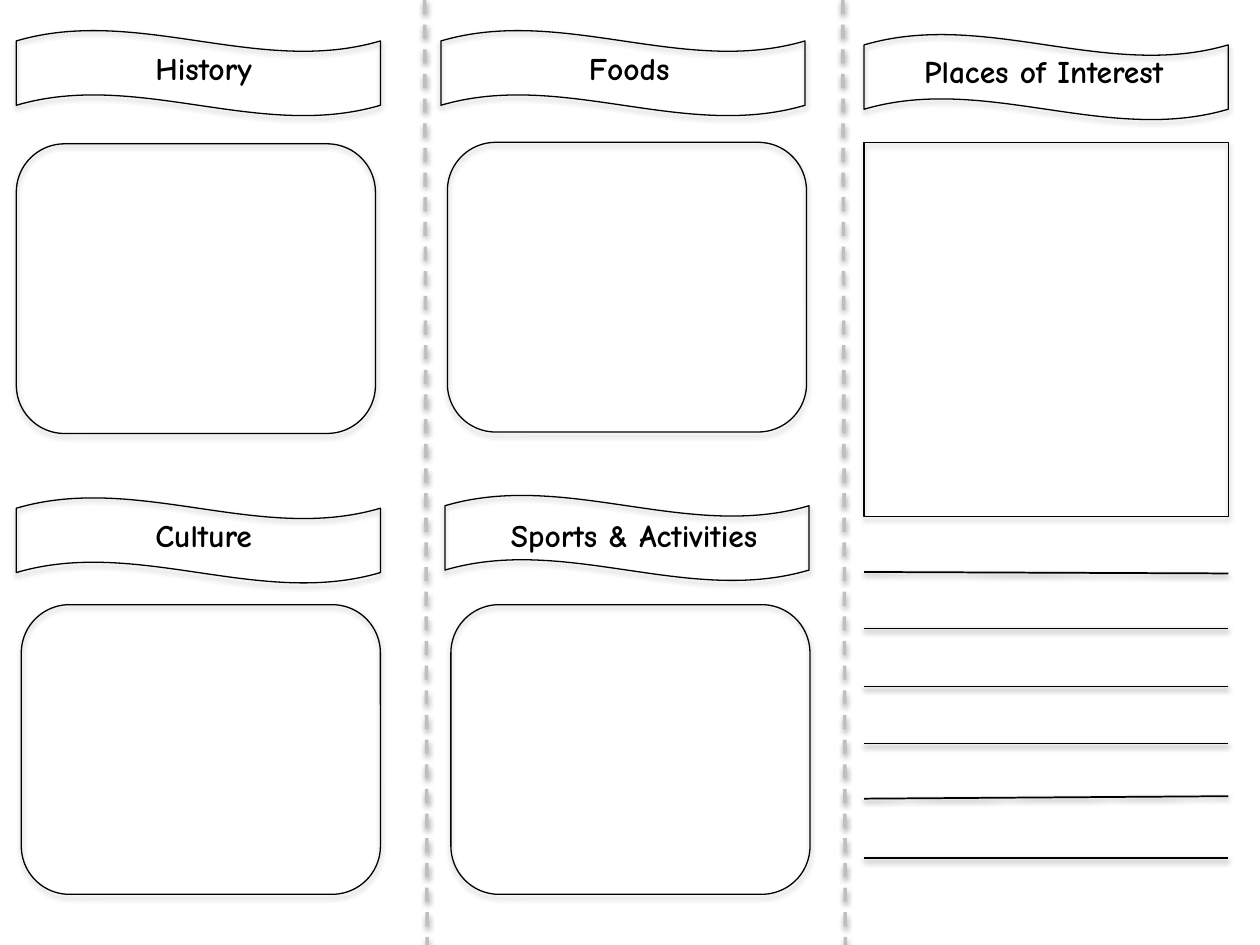
from lxml.etree import SubElement
from pptx import Presentation
from pptx.dml.color import RGBColor
from pptx.enum.dml import MSO_LINE
from pptx.enum.shapes import MSO_CONNECTOR, MSO_SHAPE
from pptx.enum.text import MSO_AUTO_SIZE, PP_ALIGN
from pptx.oxml.ns import qn
from pptx.util import Cm, Pt

FONT = "Comic Neue"
BLACK, GREY = "000000", "BFBFBF"
PAGE_WIDTH, PAGE_HEIGHT = 25.4, 19.05
BANNER_SIZE = (7.34, 1.73)
FRAME_SIZE = (7.24, 5.84)
TITLE_WIDTH, TITLE_HEIGHT = 6.93, 0.99
PLACES_LEFT, PLACES_WIDTH = 17.42, 7.34

BANNERS = [
    ("History", (0.33, 0.61), (0.64, 0.89), TITLE_WIDTH),
    ("Culture", (0.33, 10.03), (0.64, 10.31), TITLE_WIDTH),
    ("Foods", (8.89, 0.61), (9.22, 0.89), TITLE_WIDTH),
    ("Sports & Activities", (8.97, 9.98), (9.32, 10.31), TITLE_WIDTH),
    ("Places of Interest", (PLACES_LEFT, 0.69), (PLACES_LEFT, 0.94), 7.24),
]
ROUND_FRAMES = [(0.33, 2.9), (0.43, 12.19), (9.02, 2.87), (9.09, 12.19)]
PLACES_FRAME = ((PLACES_LEFT, 2.87), (PLACES_WIDTH, 7.54))
FOLDS = [(8.56, 8.61), (16.99, 17.04)]
WRITING_LINES = [
    (11.53, 11.56), (12.67, 12.67), (13.84, 13.84),
    (14.99, 14.99), (16.1, 16.05), (17.3, 17.3),
]


def color(hex_code):
    return RGBColor.from_string(hex_code)


def add_shadow(item, distance, opacity):
    effects = SubElement(item._element.spPr, qn("a:effectLst"))
    shadow = SubElement(
        effects, qn("a:outerShdw"), blurRad=str(Pt(3.1)), dist=str(Pt(distance)),
        dir="5400000", rotWithShape="0",
    )
    shade = SubElement(shadow, qn("a:srgbClr"), val=BLACK)
    SubElement(shade, qn("a:alpha"), val=str(opacity * 1000))


def add_outline(slide, preset, position, size):
    outline = slide.shapes.add_shape(preset, *map(Cm, position + size))
    outline.fill.background()
    outline.line.color.rgb = color(BLACK)
    outline.line.width = Pt(0.75)
    add_shadow(outline, 1.8, 35)


def add_rule(slide, start, end, hex_code, width, dash=None):
    rule = slide.shapes.add_connector(MSO_CONNECTOR.STRAIGHT, *map(Cm, start + end))
    rule.line.color.rgb = color(hex_code)
    rule.line.width = Pt(width)
    if dash:
        rule.line.dash_style = dash
    add_shadow(rule, 1.6, 38)


def add_title(slide, wording, position, width):
    title = slide.shapes.add_textbox(*map(Cm, position + (width, TITLE_HEIGHT)))
    frame = title.text_frame
    frame.word_wrap = True
    frame.auto_size = MSO_AUTO_SIZE.SHAPE_TO_FIT_TEXT
    frame.margin_left = frame.margin_right = Cm(0.23)
    frame.margin_top = frame.margin_bottom = Cm(0.1)
    paragraph = frame.paragraphs[0]
    paragraph.alignment = PP_ALIGN.CENTER
    run = paragraph.add_run()
    run.text = wording
    run.font.name = FONT
    run.font.size = Pt(18)
    run.font.bold = True
    run.font.color.rgb = color(BLACK)


def main():
    deck = Presentation()
    deck.slide_width, deck.slide_height = Cm(PAGE_WIDTH), Cm(PAGE_HEIGHT)
    slide = deck.slides.add_slide(deck.slide_layouts[6])

    for top_x, bottom_x in FOLDS:
        add_rule(slide, (top_x, 0), (bottom_x, PAGE_HEIGHT), GREY, 2, MSO_LINE.DASH)
    for position in ROUND_FRAMES:
        add_outline(slide, MSO_SHAPE.ROUNDED_RECTANGLE, position, FRAME_SIZE)
    add_outline(slide, MSO_SHAPE.RECTANGLE, *PLACES_FRAME)
    for left_y, right_y in WRITING_LINES:
        add_rule(slide, (PLACES_LEFT, left_y), (PLACES_LEFT + PLACES_WIDTH, right_y), BLACK, 1)
    for wording, banner_position, title_position, title_width in BANNERS:
        add_outline(slide, MSO_SHAPE.WAVE, banner_position, BANNER_SIZE)
        add_title(slide, wording, title_position, title_width)

    deck.save("out.pptx")


if __name__ == "__main__":
    main()
